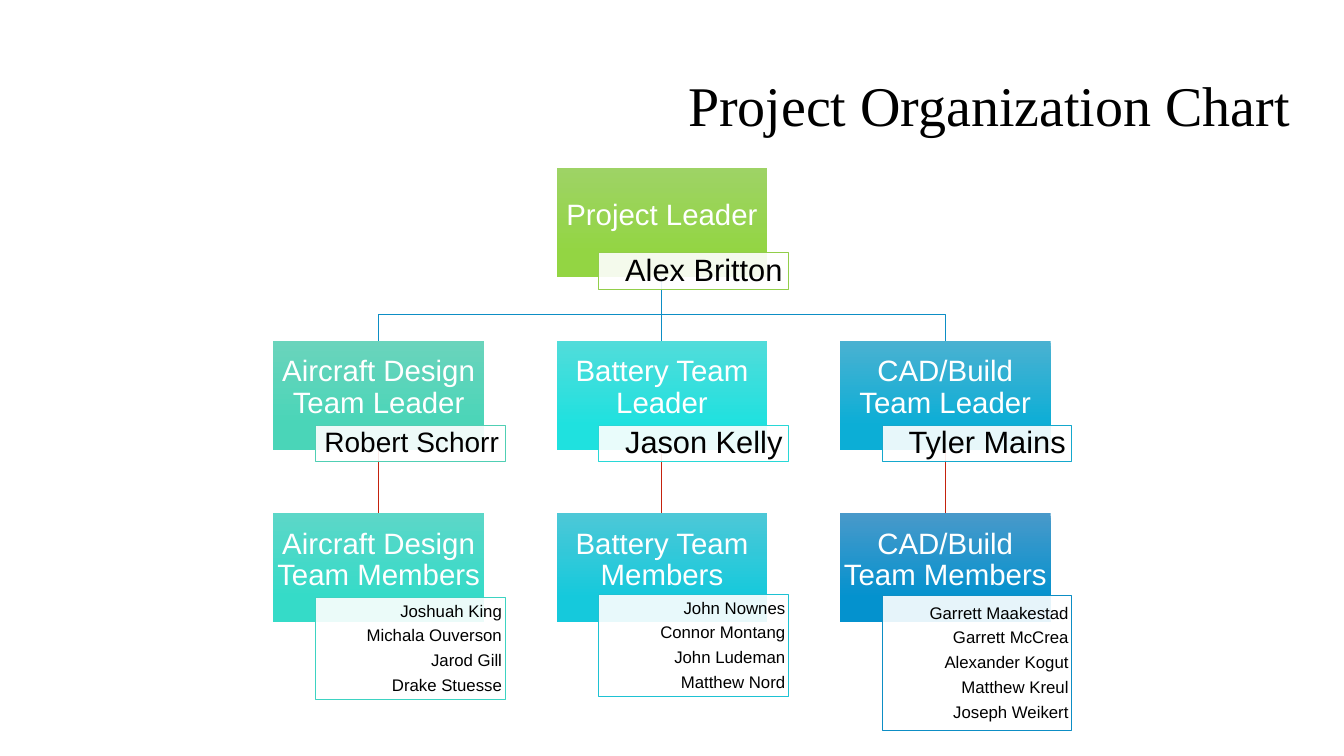
"""Build the project organization chart slide."""
import pptx
import pptx.util
import pptx.dml.color
import pptx.enum.shapes
import pptx.enum.text
import pptx.oxml
import pptx.oxml.ns
from pptx.util import Inches

ALIGN = pptx.enum.text.PP_ALIGN
RECT = pptx.enum.shapes.MSO_SHAPE.RECTANGLE
STRAIGHT = pptx.enum.shapes.MSO_CONNECTOR.STRAIGHT
DRAWING_NS = pptx.oxml.ns.nsdecls("a")

LEFT, COLUMN_STEP = 2.71, 2.81
TOP, ROW_STEP = 1.67, 1.71
ROLE_W, ROLE_H = 2.09, 1.08
NAME_W, NAME_H = 1.88, 0.36
NAME_DX, NAME_DY = 0.42, 0.84

LEADERS = [
    ("Aircraft Design Team Leader", "6AD4BC", "4AD5B8", "Robert Schorr", 20, "50CFB4"),
    ("Battery Team Leader", "51DCDA", "1FE1DF", "Jason Kelly", 22, "28D8D7"),
    ("CAD/Build Team Leader", "4AB1D1", "0CAED6", "Tyler Mains", 22, "15A8CD"),
]
MEMBERS = [
    ("Aircraft Design Team Members", "5CD7C8", "35DBC8", "3DD3C2", 5.93, 1.01,
     ["Joshuah King", "Michala Ouverson", "Jarod Gill", "Drake Stuesse"]),
    ("Battery Team Members", "4DC8D7", "15C9DC", "1EC2D3", 5.9, 1.01,
     ["John Nownes", "Connor Montang", "John Ludeman", "Matthew Nord"]),
    ("CAD/Build Team Members", "4899CA", "0492CE", "0D8EC5", 5.91, 1.34,
     ["Garrett Maakestad", "Garrett McCrea", "Alexander Kogut",
      "Matthew Kreul", "Joseph Weikert"]),
]


def rgb(color):
    """Return the colour for a hex string."""
    return pptx.dml.color.RGBColor.from_string(color)


def column_left(column):
    """Return the left edge of a column's role boxes."""
    return LEFT + column * COLUMN_STEP


def column_center(column):
    """Return the horizontal middle of a column's role boxes."""
    return column_left(column) + ROLE_W / 2


def row_top(row):
    """Return the top edge of a row's role boxes."""
    return TOP + row * ROW_STEP


def set_text(s, lines, size, color, align, insets, font="Arial", after=0):
    """Write paragraphs with one format; insets are left, top, right, bottom."""
    tf = s.text_frame
    tf.word_wrap = True
    tf.margin_left, tf.margin_top, tf.margin_right, tf.margin_bottom = map(Inches, insets)
    for i, line in enumerate(lines):
        p = tf.add_paragraph() if i else tf.paragraphs[0]
        p.text = line
        p.alignment = align
        p.line_spacing = 0.9
        p.space_after = pptx.util.Pt(after)
        p.font.size = pptx.util.Pt(size)
        p.font.name = font
        p.font.color.rgb = rgb(color)
    return tf


def add_box(slide, x, y, w, h):
    """Add a rectangle without shadow whose text is centred vertically."""
    s = slide.shapes.add_shape(RECT, Inches(x), Inches(y), Inches(w), Inches(h))
    s.shadow.inherit = False
    s.text_frame.vertical_anchor = pptx.enum.text.MSO_ANCHOR.MIDDLE
    return s


def add_role(slide, column, row, role, light, deep):
    """Add a gradient role box."""
    s = add_box(slide, column_left(column), row_top(row), ROLE_W, ROLE_H)
    s.line.fill.background()
    s.fill.gradient()
    s.fill.gradient_angle = 270
    for stop, position, color in zip(s.fill.gradient_stops, (0, 0.78), (light, deep)):
        stop.position = position
        stop.color.rgb = rgb(color)
    set_text(s, [role], 21, "FFFFFF", ALIGN.CENTER, (0.01, 0.01, 0.01, 0.15))


def add_names(slide, column, y, h, names, size, color, inset, after=0):
    """Add a translucent white box listing names."""
    s = add_box(slide, column_left(column) + NAME_DX, y, NAME_W, h)
    s.fill.solid()
    s.fill.fore_color.rgb = rgb("FFFFFF")
    white = s.fill._xPr.find(".//" + pptx.oxml.ns.qn("a:srgbClr"))
    white.append(pptx.oxml.parse_xml(f'<a:alpha {DRAWING_NS} val="90000"/>'))
    s.line.color.rgb = rgb(color)
    s.line.width = pptx.util.Pt(0.75)
    set_text(s, names, size, "000000", ALIGN.RIGHT, (inset, 0.01, inset, 0.01), after=after)


def add_leader(slide, column, row, role, light, deep, name, size, color):
    """Add a role box with the leader's name at its lower right."""
    add_role(slide, column, row, role, light, deep)
    add_names(slide, column, row_top(row) + NAME_DY, NAME_H, [name], size, color, 0.06)


def add_drop(slide, column, row, color):
    """Add a vertical line from a role box to the row below."""
    x = Inches(column_center(column))
    s = slide.shapes.add_connector(
        STRAIGHT, x, Inches(row_top(row) + ROLE_H), x, Inches(row_top(row + 1)))
    s.line.color.rgb = rgb(color)
    s.line.width = pptx.util.Pt(0.75)
    s._element.spPr.append(pptx.oxml.parse_xml(f"<a:effectLst {DRAWING_NS}/>"))


def add_branch(slide, column, color):
    """Add a bent line from the project leader to a side column."""
    start, end = column_center(1), column_center(column)
    bend = 3.12
    points = [(start, bend), (end, bend), (end, row_top(1))]
    builder = slide.shapes.build_freeform(Inches(start), Inches(TOP + ROLE_H))
    builder.add_line_segments([(Inches(x), Inches(y)) for x, y in points], close=False)
    s = builder.convert_to_shape()
    s.shadow.inherit = False
    s.fill.background()
    s.line.color.rgb = rgb(color)
    s.line.width = pptx.util.Pt(0.75)


def add_title(slide, title):
    """Add the slide title."""
    s = slide.shapes.add_textbox(Inches(6.58), Inches(0.73), Inches(6.46), Inches(0.81))
    set_text(s, [title], 40, "000000", ALIGN.CENTER, (0.1, 0.05, 0.1, 0.05), "Times New Roman")


def main():
    """Build and save the slide."""
    prs = pptx.Presentation()
    prs.slide_width, prs.slide_height = Inches(13.33), Inches(7.5)
    slide = prs.slides.add_slide(prs.slide_layouts[6])
    add_title(slide, "Project Organization Chart")
    for column in (0, 2):
        add_branch(slide, column, "0D8EC5")
    add_drop(slide, 1, 0, "0D8EC5")
    for column in range(3):
        add_drop(slide, column, 1, "C4220D")
    add_leader(slide, 1, 0, "Project Leader", "9ED365", "93D543", "Alex Britton", 22, "92CE4A")
    for column, leader in enumerate(LEADERS):
        add_leader(slide, column, 1, *leader)
    for column, (role, light, deep, color, y, h, names) in enumerate(MEMBERS):
        add_role(slide, column, 2, role, light, deep)
        add_names(slide, column, y, h, names, 12, color, 0.03, after=4.7)
    prs.save("out.pptx")


if __name__ == "__main__":
    main()
